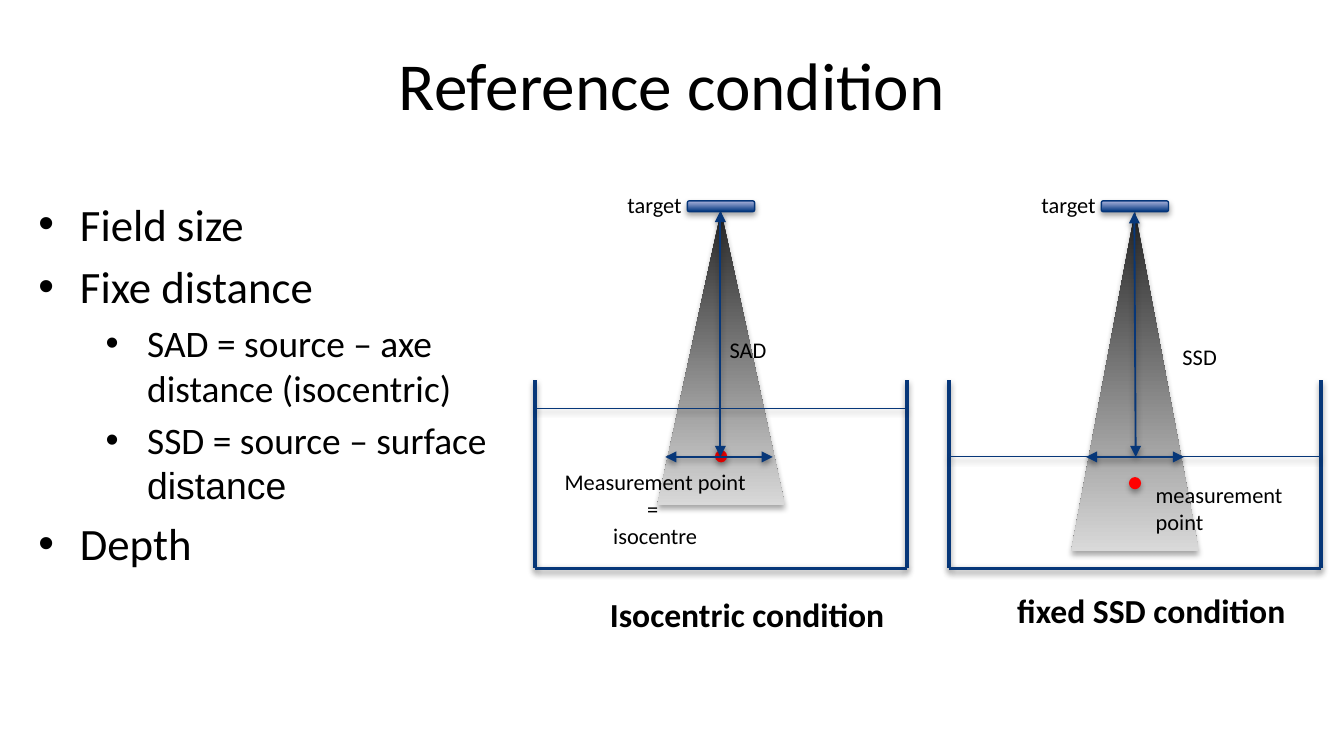
from lxml import etree
from pptx import Presentation
from pptx.dml.color import RGBColor
from pptx.enum.shapes import MSO_CONNECTOR, MSO_SHAPE
from pptx.enum.text import MSO_ANCHOR, MSO_AUTO_SIZE, PP_ALIGN
from pptx.oxml.ns import qn
from pptx.util import Inches, Pt

LINE = MSO_CONNECTOR.STRAIGHT
TRIANGLE = MSO_SHAPE.ISOSCELES_TRIANGLE
BAR, DOT = MSO_SHAPE.ROUNDED_RECTANGLE, MSO_SHAPE.OVAL
CENTER, LEFT = PP_ALIGN.CENTER, PP_ALIGN.LEFT
MIDDLE = MSO_ANCHOR.MIDDLE
FIXED, GROW = MSO_AUTO_SIZE.NONE, MSO_AUTO_SIZE.SHAPE_TO_FIT_TEXT

SLIDE_W = Inches(10)
SLIDE_H = SLIDE_W * 9 // 16
CELL = SLIDE_W / 100
COLORS = {
    "text": "000000", "line": "073779", "edge": "043579", "point": "FF0000",
    "beam_dark": "262626", "beam_light": "D9D9D9",
    "target_dark": "003680", "target_light": "ABB3DC", "shadow": "000000",
}


def rgb(name):
    """Return the named colour."""
    return RGBColor.from_string(COLORS[name])


def cells(*values):
    """Turn counts of grid cells into lengths."""
    return [round(v * CELL) for v in values]


def style(font, **extra):
    """Apply the common font and any extra format values."""
    for key, value in {"name": "Calibri", **extra}.items():
        setattr(font, key, value)
    font.color.rgb = rgb("text")


def add_shadow(sp, alpha, dist):
    """Give a shape or connector a soft shadow below it."""
    pr = sp._element.spPr
    effects = pr.find(qn("a:effectLst"))
    if effects is None:
        effects = etree.SubElement(pr, qn("a:effectLst"))
    outer = etree.SubElement(effects, qn("a:outerShdw"), blurRad="40000",
                             dist=str(dist), dir="5400000", rotWithShape="0")
    color = etree.SubElement(outer, qn("a:srgbClr"), val=COLORS["shadow"])
    etree.SubElement(color, qn("a:alpha"), val=str(alpha * 1000))


def add_solid(group, kind, box, fill, edge=None, angle=None):
    """Add a filled preset shape; two fill names make a gradient."""
    sp = group.shapes.add_shape(kind, *cells(*box))
    sp.shadow.inherit = False
    if angle is None:
        sp.fill.solid()
        sp.fill.fore_color.rgb = rgb(fill[0])
    else:
        sp.fill.gradient()
        sp.fill.gradient_angle = angle
        for stop, name in zip(sp.fill.gradient_stops, fill):
            stop.color.rgb = rgb(name)
    if edge:
        sp.line.color.rgb = rgb(edge)
        sp.line.width = Pt(0.75)
    else:
        sp.line.fill.background()
    add_shadow(sp, 35, 23000)


def add_line(group, ends, width, arrows=False):
    """Add a line, with arrowheads at both ends if wanted."""
    line = group.shapes.add_connector(LINE, *cells(*ends))
    line.line.color.rgb = rgb("line")
    line.line.width = Pt(width)
    if arrows:
        ln = line._element.spPr.find(qn("a:ln"))
        for end in ("a:headEnd", "a:tailEnd"):
            etree.SubElement(ln, qn(end), type="triangle")
    add_shadow(line, 38, 20000)


def add_label(group, box, lines, size=12, bold=False, wrap=False, align=LEFT):
    """Add a text box with one paragraph for each line."""
    tf = group.shapes.add_textbox(*cells(*box)).text_frame
    tf.word_wrap, tf.auto_size = wrap, GROW
    for i, text in enumerate(lines):
        p = tf.add_paragraph() if i else tf.paragraphs[0]
        p.alignment = align
        r = p.add_run()
        r.text = text
        style(r.font, size=Pt(size), bold=bold)


def add_title(s, box, text):
    """Place the slide title."""
    sp = s.shapes.title
    sp.left, sp.top, sp.width, sp.height = cells(*box)
    tf = sp.text_frame
    tf.text, tf.vertical_anchor, tf.auto_size = text, MIDDLE, FIXED
    tf.paragraphs[0].alignment = CENTER
    style(tf.paragraphs[0].runs[0].font, size=Pt(36))


def add_list(s, box, items):
    """Place the two-level bullet list in the body placeholder."""
    sp = s.placeholders[1]
    sp.left, sp.top, sp.width, sp.height = cells(*box)
    tf = sp.text_frame
    tf.auto_size = FIXED
    for i, (level, runs) in enumerate(items):
        p = tf.add_paragraph() if i else tf.paragraphs[0]
        size = (24, 20)[level]
        p.level = level
        p.space_before = Pt(0.2 * size if i else 0)
        pr = p._p.get_or_add_pPr()
        pr.set("marL", str(Inches((0.31, 0.81)[level])))
        pr.set("indent", str(-Inches(0.31)))
        etree.SubElement(pr, qn("a:buFont"), typeface="Arial")
        etree.SubElement(pr, qn("a:buChar"), char="•")
        for text, font in runs:
            r = p.add_run()
            r.text = text
            style(r.font, size=Pt(size), name=font)


def add_setup(s, box, water, beam, point, arrows, labels):
    """Draw a water tank under a beam, with its distances and labels."""
    x, y, w, h = box
    group = s.shapes.add_group_shape()
    rim, right, bottom = y + 14.6, x + w, y + h
    add_solid(group, TRIANGLE, (x + 9.1, y + 2, 9.5, beam),
              ("beam_dark", "beam_light"), angle=270)
    add_solid(group, BAR, (x + 11.35, y + 1.25, 5, 0.8),
              ("target_dark", "target_light"), "edge", angle=90)
    add_solid(group, DOT, (x + 13.45, y + point, 0.8, 0.8), ("point",), "point")
    for ends in ((x, rim, x, bottom), (right, rim, right, bottom),
                 (x, bottom, right, bottom)):
        add_line(group, ends, 2)
    add_line(group, (x, y + water, right, y + water), 0.5)
    add_label(group, (x + 5.9, y + 0.05, 6.1, 3), ["target"])
    for (dx, dy, lw, lh), lines, options in labels:
        add_label(group, (x + dx, y + dy, lw, lh), lines, **options)
    for x1, y1, x2, y2 in arrows:
        add_line(group, (x + x1, y + y1, x + x2, y + y2), 1, True)


def main():
    """Build the slide and save it."""
    prs = Presentation()
    prs.slide_width, prs.slide_height = SLIDE_W, SLIDE_H
    s = prs.slides.add_slide(prs.slide_layouts[1])
    add_title(s, (5, 2.7, 90, 7.1), "Reference condition")
    add_list(s, (1.85, 14.1, 39.9, 42.1), [
        (0, [("Field size", "Calibri")]),
        (0, [("Fixe distance", "Calibri")]),
        (1, [("SAD = source – axe distance (isocentric)", "Calibri")]),
        (1, [("SSD = source – surface ", "Calibri"), ("distance", "Arial")]),
        (0, [("Depth", "Calibri")]),
    ])
    caption = {"size": 18, "bold": True}
    add_setup(s, (39.8, 13.7, 27.7, 28.6), water=16.7, beam=21.9, point=19.85,
              arrows=[(13.8, 2, 13.8, 20.3), (9.7, 20.3, 17.7, 20.3)],
              labels=[
                  ((1.2, 20.65, 15.5, 7.1), ["Measurement point = ", "isocentre"],
                   {"wrap": True, "align": CENTER}),
                  ((4.6, 30, 22.6, 4), ["Isocentric condition"], caption),
                  ((13.5, 10.8, 4.8, 3), ["SAD"], {})])
    add_setup(s, (70.6, 13.7, 27.7, 28.6), water=20.3, beam=25.3, point=21.85,
              arrows=[(13.8, 2.1, 13.9, 20.3), (10.2, 20.3, 17.5, 20.3)],
              labels=[
                  ((14.4, 21.6, 11.9, 5), ["measurement point"], {"wrap": True}),
                  ((4.1, 29.7, 22.2, 4), ["fixed SSD condition"], caption),
                  ((16.4, 11.35, 4.6, 3), ["SSD"], {})])
    prs.save("out.pptx")


if __name__ == "__main__":
    main()
